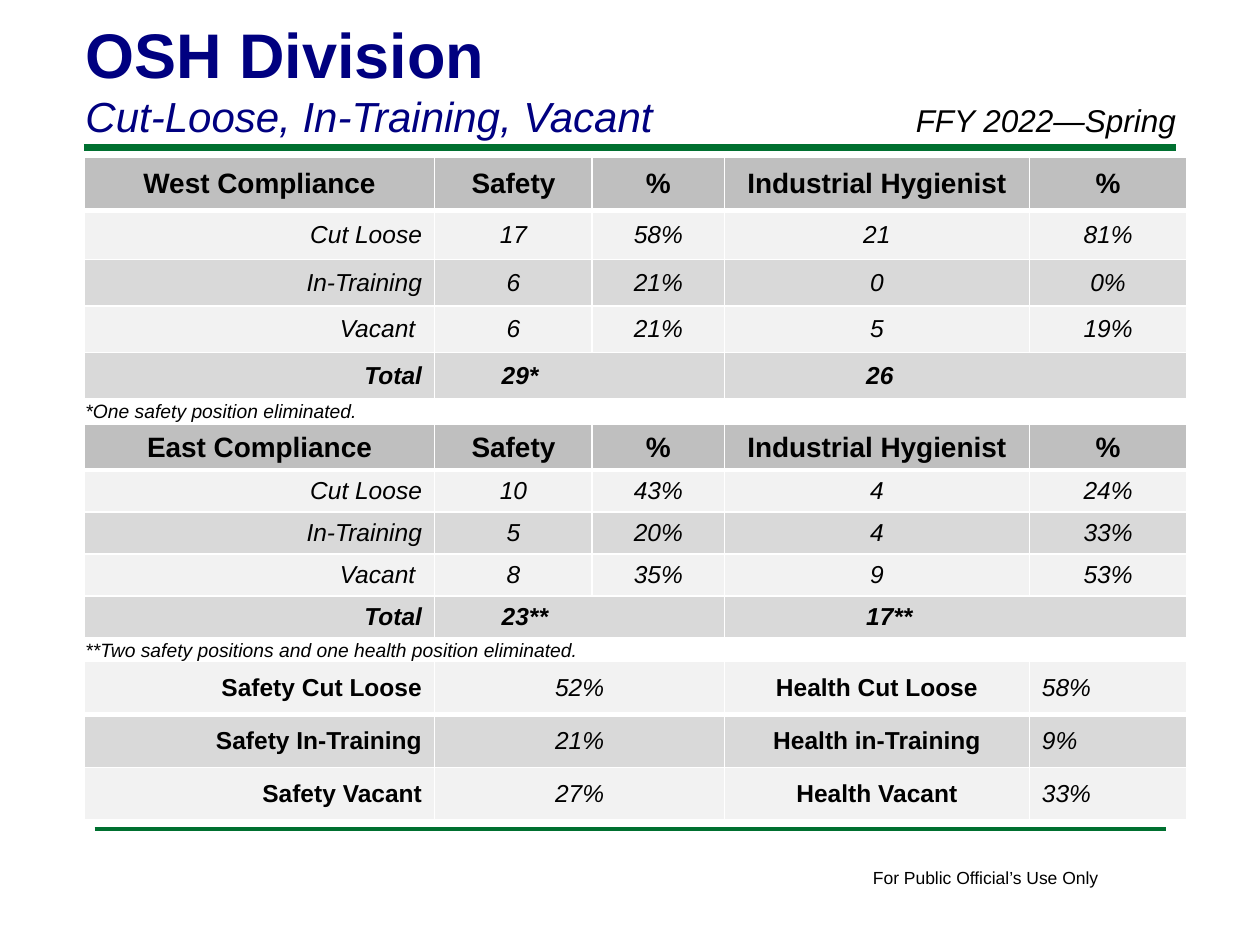
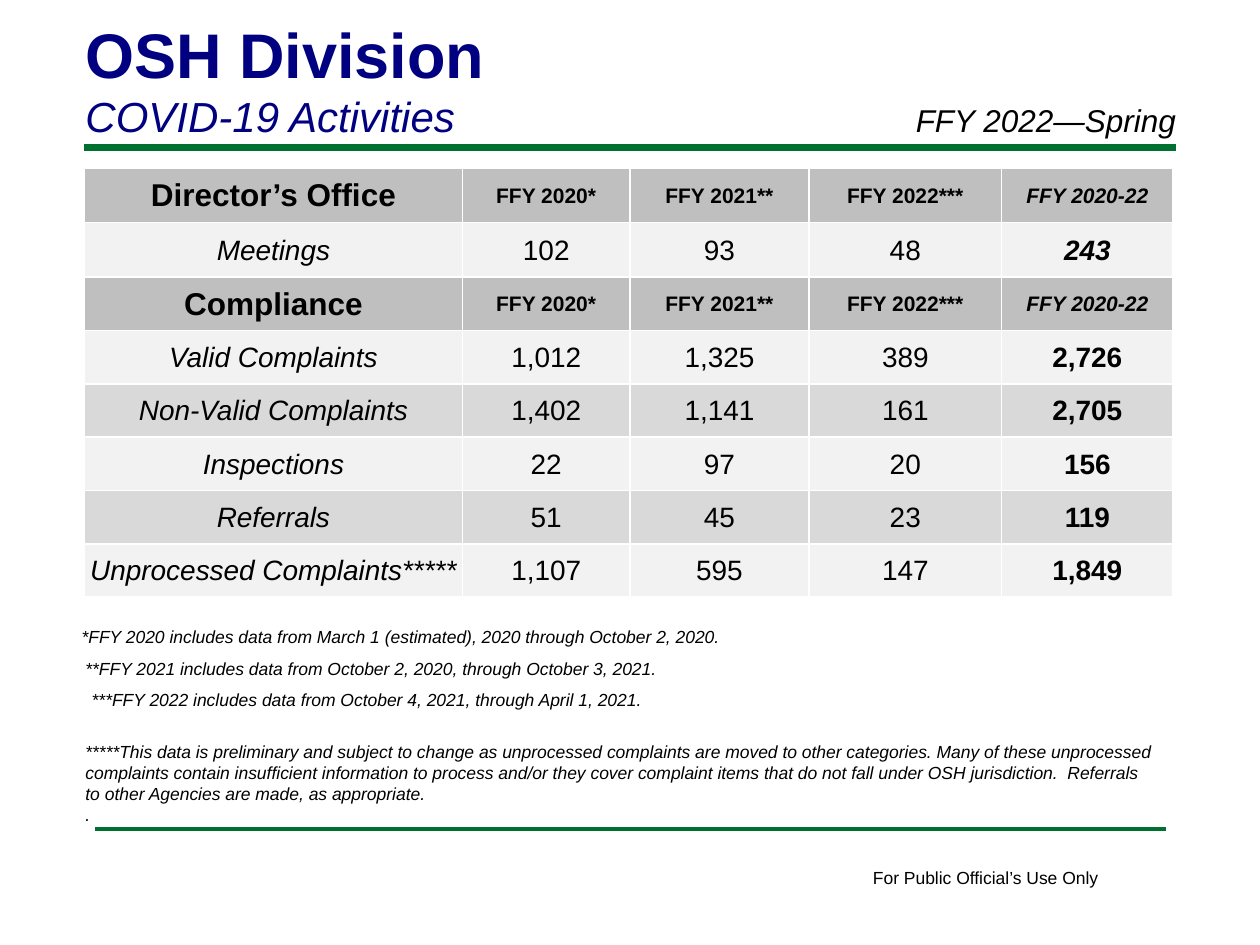
from lxml import etree
from pptx import Presentation
from pptx.dml.color import RGBColor
from pptx.enum import shapes, text
from pptx.oxml import ns
from pptx.util import Pt

theme = {
    "font": "Arial",
    "black": "000000", "navy": "000080", "green": "007030", "white": "FFFFFF",
    "head": "BFBFBF", "light": "F2F2F2", "dark": "D9D9D9",
    "title": 36, "subtitle": 24, "period": 18, "note": 11, "small": 10,
    "group": 18, "column": 16, "value": 14, "year": 12,
}
left, center, right = text.PP_ALIGN.LEFT, text.PP_ALIGN.CENTER, text.PP_ALIGN.RIGHT


def add_run(p, words, size, bold=False, italic=False, color="black"):
    r = p.add_run()
    r.text = words
    fmt = {"name": theme["font"], "size": Pt(theme[size]), "bold": bold, "italic": italic}
    for key, value in fmt.items():
        setattr(r.font, key, value)
    r.font.color.rgb = RGBColor.from_string(theme[color])


def add_grid(s, x, y, cols, heights, rows, styles, thick=False, margins=None):
    frame = s.shapes.add_table(len(rows), len(cols), Pt(x), Pt(y), Pt(sum(cols)), Pt(sum(heights)))
    tbl = frame.table
    tbl.first_row = tbl.horz_banding = False
    for column, width in zip(tbl.columns, cols):
        column.width = Pt(width)
    for i, (kind, fill, words) in enumerate(rows):
        tbl.rows[i].height = Pt(heights[i])
        for j, word in enumerate(words):
            cell = tbl.cell(i, j)
            tcPr = cell._tc.get_or_add_tcPr()
            for side in "LRTB":
                heavy = thick and (i, side) in ((0, "B"), (1, "T"))
                ln = etree.SubElement(tcPr, ns.qn("a:ln" + side), w=str(Pt(3 if heavy else 1)))
                paint = etree.SubElement(ln, ns.qn("a:solidFill"))
                etree.SubElement(paint, ns.qn("a:srgbClr"), val=theme["white"])
            cell.fill.solid()
            cell.fill.fore_color.rgb = RGBColor.from_string(theme[fill])
            cell.vertical_anchor = text.MSO_ANCHOR.MIDDLE
            for key, value in (margins or {}).items():
                setattr(cell, "margin_" + key, Pt(value))
            if word is None:
                tbl.cell(i, j - 1).merge(cell)
                continue
            size, bold, italic, align, *indent = styles[kind][j]
            if indent:
                cell.margin_left = Pt(indent[0])
            p = cell.text_frame.paragraphs[0]
            p.alignment = align
            add_run(p, word, size, bold, italic)


prs = Presentation()
prs.slide_width, prs.slide_height = Pt(720), Pt(540)

edge = 48.24
staff_cols = [200.16, 90, 75.6, 174.24, 90]
share_cols = [200.16, 165.6, 174.24, 90]
covid_cols = [216, 95.76, 102.24, 110.16, 97.92]

staff_styles = {
    "head": [("column", True, False, center)] * 5,
    "body": [("value", False, True, right)] + [("value", False, True, center)] * 4,
    "total": [("value", True, True, right), ("value", True, True, left, 38.3), None,
              ("value", True, True, left, 81), None],
}
share_styles = {"body": [("value", True, False, right), ("value", False, True, center),
                         ("value", True, False, center), ("value", False, True, left)]}
number = ("column", False, False, center)
label = ("column", False, True, center)
covid_styles = {
    "head": [("group", True, False, center)] + [("year", True, False, center)] * 3
            + [("year", True, True, center)],
    "meeting": [label] + [number] * 3 + [("column", True, True, center)],
    "body": [label] + [number] * 3 + [("column", True, False, center)],
}

staff_tables = [
    ("West Compliance", 90, [30.2, 28, 26.6, 26.6, 26.6],
     ["17", "58%", "21", "81%"], ["6", "21%", "0", "0%"], ["6", "21%", "5", "19%"], "29*", "26"),
    ("East Compliance", 242.64, [26, 24, 24, 24, 24],
     ["10", "43%", "4", "24%"], ["5", "20%", "4", "33%"], ["8", "35%", "9", "53%"], "23**", "17**"),
]
share_rows = [
    ("body", "light", ["Safety Cut Loose", "52%", "Health Cut Loose", "58%"]),
    ("body", "dark", ["Safety In-Training", "21%", "Health in-Training", "9%"]),
    ("body", "light", ["Safety Vacant", "27%", "Health Vacant", "33%"]),
]
years = ["FFY 2020*", "FFY 2021**", "FFY 2022***", "FFY 2020-22"]
covid_rows = [
    ("head", "head", ["Director’s Office"] + years),
    ("meeting", "light", ["Meetings", "102", "93", "48", "243"]),
    ("head", "head", ["Compliance"] + years),
    ("body", "light", ["Valid Complaints", "1,012", "1,325", "389", "2,726"]),
    ("body", "dark", ["Non-Valid Complaints", "1,402", "1,141", "161", "2,705"]),
    ("body", "light", ["Inspections", "22", "97", "20", "156"]),
    ("body", "dark", ["Referrals", "51", "45", "23", "119"]),
    ("body", "light", ["Unprocessed Complaints*****", "1,107", "595", "147", "1,849"]),
]

staff_notes = [
    ((41.76, 224.64, 173.52, 20.88), False, ["*One safety position eliminated."], "note"),
    ((41.76, 361.44, 301.68, 20.88), False,
     ["**Two safety positions and one health position eliminated."], "note"),
]
covid_notes = [
    ((39.6, 354.24, 628.56, 19.44), True,
     ["*FFY 2020 includes data from March 1 (estimated), 2020 through October 2, 2020."], "small"),
    ((41.76, 372.24, 628.56, 19.44), True,
     ["**FFY 2021 includes data from October 2, 2020, through October 3, 2021."], "small"),
    ((45.36, 390.24, 437.04, 19.44), True,
     ["***FFY 2022 includes data from October 4, 2021, through April 1, 2021."], "small"),
    ((41.76, 419.76, 624.24, 55.44), True,
     ["*****This data is preliminary and subject to change as unprocessed complaints are moved "
      "to other categories. Many of these unprocessed complaints contain insufficient information "
      "to process and/or they cover complaint items that do not fall under OSH jurisdiction.  "
      "Referrals to other Agencies are made, as appropriate.", "."], "small"),
]

for subtitle, notes in (("Cut-Loose, In-Training, Vacant", staff_notes),
                        ("COVID-19 Activities", covid_notes)):
    s = prs.slides.add_slide(prs.slide_layouts[6])
    for x1, x2, y, weight in ((48, 672, 84.24, 4), (54, 666, 473.76, 2)):
        rule = s.shapes.add_connector(shapes.MSO_CONNECTOR.STRAIGHT, Pt(x1), Pt(y), Pt(x2), Pt(y))
        rule.line.width = Pt(weight)
        rule.line.color.rgb = RGBColor.from_string(theme["green"])
        etree.SubElement(rule._element.spPr, ns.qn("a:effectLst"))

    if notes is staff_notes:
        for name, y, heights, loose, training, vacant, safety, health in staff_tables:
            rows = [
                ("head", "head", [name, "Safety", "%", "Industrial Hygienist", "%"]),
                ("body", "light", ["Cut Loose"] + loose),
                ("body", "dark", ["In-Training"] + training),
                ("body", "light", ["Vacant "] + vacant),
                ("total", "dark", ["Total", safety, None, health, None]),
            ]
            add_grid(s, edge, y, staff_cols, heights, rows, staff_styles, thick=True)
        add_grid(s, edge, 378, share_cols, [30.24] * 3, share_rows, share_styles, thick=True)
    else:
        add_grid(s, edge, 96, covid_cols, [31.2] * 2 + [30.5] * 6, covid_rows, covid_styles,
                 margins={"left": 0.72, "right": 0.72, "top": 0.72, "bottom": 0})

    blocks = [
        ((491.76, 491.76, 144.72, 19.44), False,
         [("For Public Official’s Use Only", "small")], "TOP"),
        ((41.76, 4.32, 594, 79.92), True,
         [("OSH Division", "title", True, False, "navy"),
          (subtitle, "subtitle", False, True, "navy")], "BOTTOM"),
        ((516.24, 54, 180, 28.8), True, [("FFY 2022—Spring", "period", False, True)], "TOP"),
    ]
    blocks += [(box, wrap, [(line, size, False, True) for line in lines], "TOP")
               for box, wrap, lines, size in notes]
    for box, wrap, lines, anchor in blocks:
        tf = s.shapes.add_textbox(*map(Pt, box)).text_frame
        tf.word_wrap = wrap
        tf.vertical_anchor = text.MSO_ANCHOR[anchor]
        for i, line in enumerate(lines):
            p = tf.add_paragraph() if i else tf.paragraphs[0]
            add_run(p, *line)

prs.save("out.pptx")
